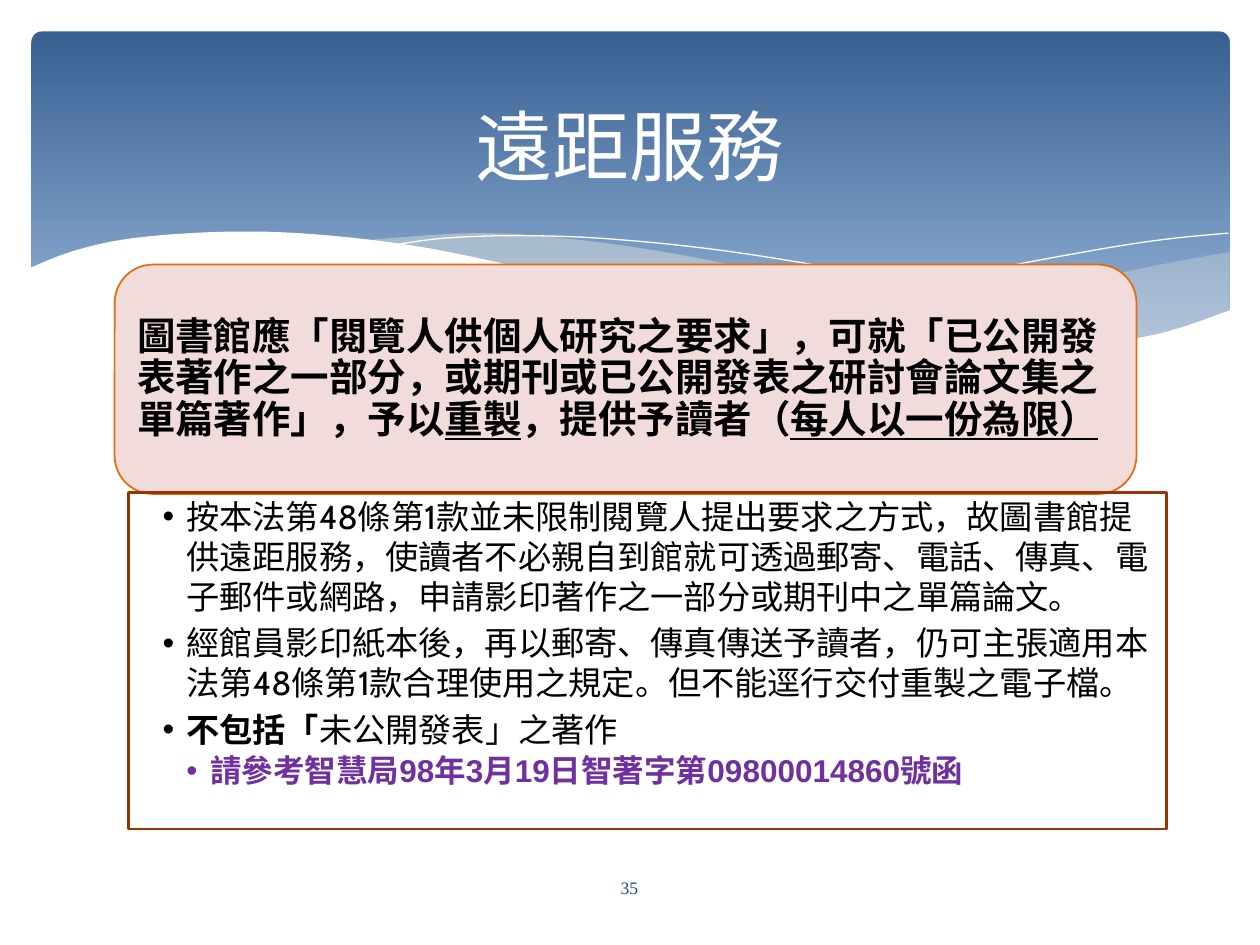
from dataclasses import dataclass
from typing import Optional

from lxml.etree import SubElement
from pptx import Presentation
from pptx.dml.color import RGBColor
from pptx.enum.shapes import MSO_SHAPE
from pptx.enum.text import MSO_ANCHOR, MSO_AUTO_SIZE, PP_ALIGN
from pptx.oxml.ns import qn
from pptx.util import Inches, Pt

WIDTH, HEIGHT = Inches(10), Inches(7.5)
COLUMN, ROW = WIDTH / 10, HEIGHT / 7.5
INDENT = 0.19

COLORS = {
    "white": "FFFFFF", "black": "000000", "number": "1F497D",
    "banner top": "376092", "banner bottom": "95B3D7", "mist": "EEECE1",
    "rule": "F2DCDB", "rule edge": "E46C0A", "list edge": "993300", "note": "7030A0",
}


@dataclass
class Span:
    text: str
    bold: bool = False
    underline: bool = False


@dataclass
class Item:
    spans: list[Span]
    size: float = 19
    font: str = "Cabin"
    color: str = "black"
    depth: int = 0
    spacing: float = 1.0
    align: PP_ALIGN = PP_ALIGN.LEFT
    bullet: bool = True


@dataclass
class Wave:
    """Smooth strokes joined by straight lines; without a fill it is an open white line."""
    strokes: list[list[tuple[float, float]]]
    fill: Optional[str] = None
    opacity: int = 100


WAVES = [
    Wave([[(9.76, 2), (9.21, 2.1), (8.61, 2.23), (7.53, 2.48), (6.61, 2.65)],
          [(6.61, 2.65), (7.32, 2.74), (8.03, 2.78), (8.72, 2.74), (9.28, 2.63), (9.76, 2.47)]],
         "mist", 29),
    Wave([[(8.93, 2.73), (8.07, 2.6), (7.06, 2.4), (6.29, 2.22), (5.55, 2.05),
           (4.65, 1.91), (3.8, 1.85), (2.86, 1.91)],
          [(2.86, 1.91), (3.62, 2.03), (4.49, 2.22), (5.66, 2.48), (6.5, 2.64),
           (7.36, 2.75), (8.18, 2.78), (8.93, 2.73)]], "mist", 40),
    Wave([[(3.09, 1.95), (3.53, 1.89), (4.16, 1.87), (4.89, 1.9), (5.82, 2),
           (6.95, 2.19), (7.95, 2.41), (9.07, 2.72)]]),
    Wave([[(6.13, 2.57), (6.95, 2.35), (7.76, 2.16), (8.66, 1.99), (9.24, 1.9), (9.75, 1.85)]]),
    Wave([[(9.77, 2.46), (9.1, 2.67), (8.09, 2.77), (7.08, 2.7), (6.03, 2.54), (5.03, 2.33),
           (4.47, 2.2), (3.4, 1.97), (2.5, 1.86), (1.77, 1.84), (1.06, 1.89), (0.59, 1.99),
           (0.23, 2.13)],
          [(0.23, 3.29), (9.77, 3.29)]], "white"),
]

TITLE = [Item([Span("遠距服務")], 44, color="white", align=PP_ALIGN.CENTER, bullet=False)]
RULE = [Item([
    Span("圖書館應「閱覽人供個人研究之要求」，可就「已公開發表著作之一部分，"
         "或期刊或已公開發表之研討會論文集之單篇著作」，予以", True),
    Span("重製", True, True),
    Span("，提供予讀者（", True),
    Span("每人以一份為限）", True, True),
], 22, spacing=0.9, bullet=False)]
DETAILS = [
    Item([Span("按本法第48條第1款並未限制閱覽人提出要求之方式，故圖書館提供遠距服務，"
               "使讀者不必親自到館就可透過郵寄、電話、傳真、電子郵件或網路，"
               "申請影印著作之一部分或期刊中之單篇論文。")]),
    Item([Span("經館員影印紙本後，再以郵寄、傳真傳送予讀者，仍可主張適用本法第48條第1款"
               "合理使用之規定。但不能逕行交付重製之電子檔。")]),
    Item([Span("不包括「", True), Span("未公開發表」之著作")]),
    Item([Span("請參考智慧局98年3月19日智著字第09800014860號函", True)],
         18, "Arial", "note", depth=1, spacing=0.9),
]
NUMBER = [Item([Span("35")], 10, "Times New Roman", "number",
               align=PP_ALIGN.CENTER, bullet=False)]


def color(name: str) -> RGBColor:
    return RGBColor.from_string(COLORS[name])


def cells(left: float, top: float, width: float, height: float) -> list[int]:
    return [round(left * COLUMN), round(top * ROW), round(width * COLUMN), round(height * ROW)]


def place(shape, *area: float) -> None:
    shape.left, shape.top, shape.width, shape.height = cells(*area)


def smooth(knots: list, steps: int = 6) -> list:
    """Catmull-Rom curve through the knots."""
    if len(knots) < 3:
        return knots
    padded = [knots[0], *knots, knots[-1]]
    curve = [knots[0]]
    for a, b, c, d in zip(padded, padded[1:], padded[2:], padded[3:]):
        for step in range(1, steps + 1):
            t = step / steps
            curve.append(tuple(
                (2 * q + (r - p) * t + (2 * p - 5 * q + 4 * r - s) * t ** 2
                 + (3 * q - p - 3 * r + s) * t ** 3) / 2
                for p, q, r, s in zip(a, b, c, d)))
    return curve


def draw_wave(page, wave: Wave) -> None:
    points = [(round(x * COLUMN), round(y * ROW))
              for stroke in wave.strokes for x, y in smooth(stroke)]
    builder = page.shapes.build_freeform(*points[0])
    builder.add_line_segments(points[1:], close=wave.fill is not None)
    shape = builder.convert_to_shape()
    shape.shadow.inherit = False
    if wave.fill is None:
        shape.fill.background()
        shape.line.color.rgb = color("white")
        shape.line.width = Pt(0)
        return
    shape.line.fill.background()
    shape.fill.solid()
    shape.fill.fore_color.rgb = color(wave.fill)
    if wave.opacity < 100:
        tint = shape._element.spPr.find(".//" + qn("a:srgbClr"))
        SubElement(tint, qn("a:alpha"), val=str(wave.opacity * 1000))


def draw_banner(page) -> None:
    banner = page.shapes.add_shape(MSO_SHAPE.ROUNDED_RECTANGLE, *cells(0.25, 0.25, 9.51, 2.7))
    banner.adjustments[0] = 0.03
    banner.shadow.inherit = False
    banner.line.fill.background()
    banner.fill.gradient()
    banner.fill.gradient_angle = 270
    stops = zip(banner.fill.gradient_stops, ("banner top", "banner bottom"), (0, 0.9))
    for stop, name, position in stops:
        stop.color.rgb = color(name)
        stop.position = position


def set_bullet(para, item: Item) -> None:
    properties = para._p.get_or_add_pPr()
    hang = Inches(INDENT) if item.bullet else 0
    properties.set("marL", str(hang * (item.depth + 1)))
    properties.set("indent", str(-hang))
    if item.bullet:
        SubElement(properties, qn("a:buFont"), typeface="Arial")
        SubElement(properties, qn("a:buChar"), char="•")
    else:
        SubElement(properties, qn("a:buNone"))


def write(box, items: list[Item], margins: tuple = (0.09, 0.09, 0.09, 0.09),
          anchor: MSO_ANCHOR = MSO_ANCHOR.MIDDLE) -> None:
    frame = box.text_frame
    frame.word_wrap = True
    frame.auto_size = MSO_AUTO_SIZE.NONE
    frame.vertical_anchor = anchor
    (frame.margin_left, frame.margin_top,
     frame.margin_right, frame.margin_bottom) = map(Inches, margins)
    frame.text = "\n".join("" for _ in items)
    for para, item in zip(frame.paragraphs, items):
        para.alignment = item.align
        para.line_spacing = item.spacing
        para.space_before = Pt(0)
        para.space_after = Pt(0.2 * item.size if item.bullet else 0)
        set_bullet(para, item)
        for span in item.spans:
            run = para.add_run()
            run.text = span.text
            font = run.font
            font.name, font.size = item.font, Pt(item.size)
            font.bold, font.underline = span.bold, span.underline
            font.color.rgb = color(item.color)


def main() -> None:
    deck = Presentation()
    deck.slide_width, deck.slide_height = WIDTH, HEIGHT
    page = deck.slides.add_slide(deck.slide_layouts[1])
    title, details = page.placeholders

    draw_banner(page)
    for wave in WAVES:
        draw_wave(page, wave)

    rule = page.shapes.add_shape(MSO_SHAPE.ROUNDED_RECTANGLE, *cells(0.91, 2.1, 8.11, 1.82))
    rule.shadow.inherit = False
    rule.fill.solid()
    rule.fill.fore_color.rgb = color("rule")
    rule.line.color.rgb = color("rule edge")
    rule.line.width = Pt(1)
    write(rule, RULE)

    for holder in (details, title):
        page.shapes._spTree.append(holder._element)
    place(details, 1.02, 3.91, 8.24, 2.67)
    details.line.color.rgb = color("list edge")
    details.line.width = Pt(1.5)
    write(details, DETAILS, (0.27, 0.03, 0.14, 0.03), MSO_ANCHOR.TOP)
    place(title, 0.5, 0.68, 9, 0.94)
    write(title, TITLE)

    write(page.shapes.add_textbox(*cells(4.36, 6.84, 1.27, 0.4)), NUMBER)
    deck.save("out.pptx")


if __name__ == "__main__":
    main()
